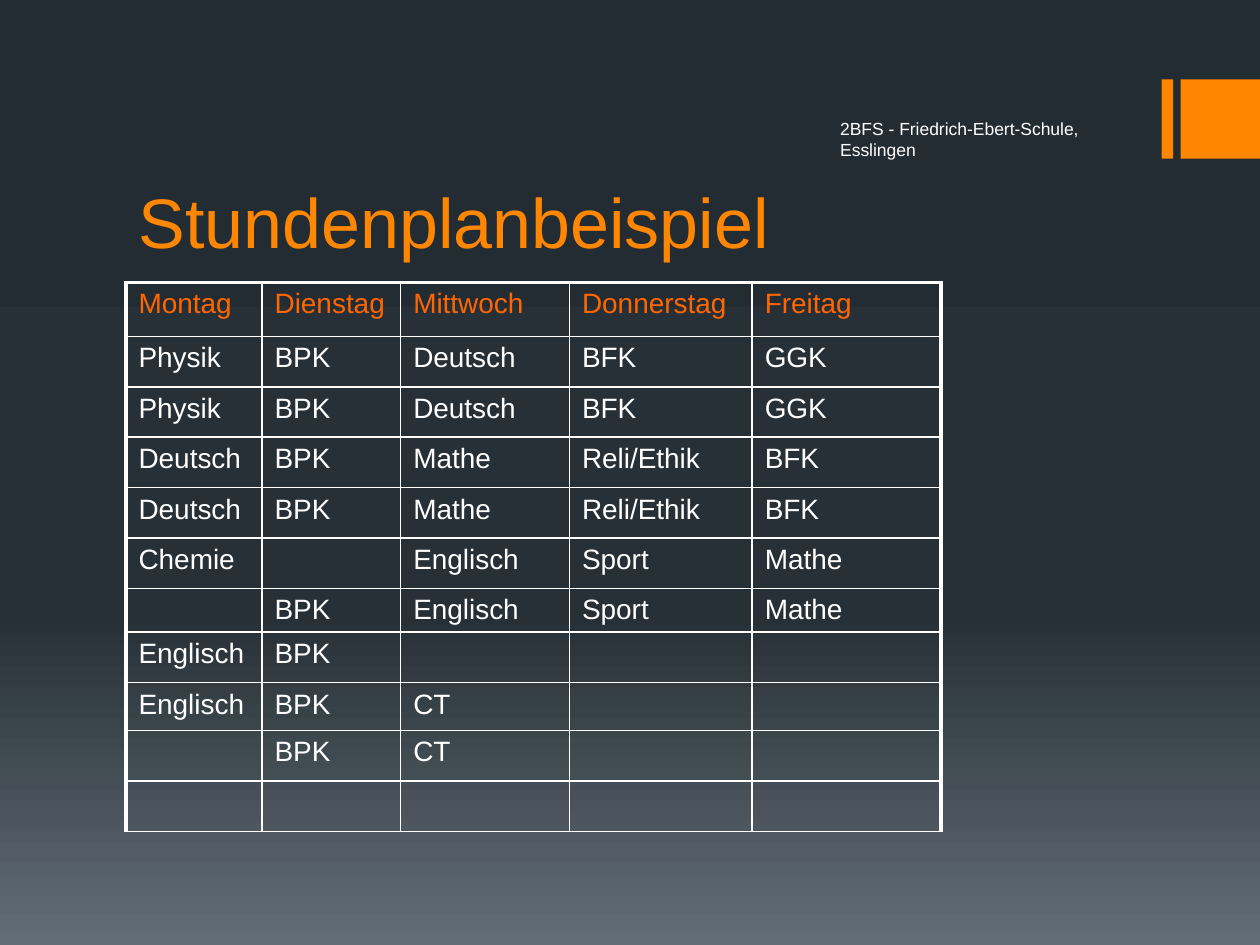
from copy import deepcopy
from dataclasses import dataclass

from lxml import etree
from pptx import Presentation, util as u
from pptx.dml.color import RGBColor
from pptx.enum import shapes, text
from pptx.oxml.ns import qn

COLORS = {
    "accent": "FF8600",
    "weekday": "FF6600",
    "white": "FFFFFF",
}
BACKDROP = [(0, "242C33"), (0.65, "273037"), (1, "636D76")]

TIMETABLE = [
    ("Montag", "Dienstag", "Mittwoch", "Donnerstag", "Freitag"),
    ("Physik", "BPK", "Deutsch", "BFK", "GGK"),
    ("Physik", "BPK", "Deutsch", "BFK", "GGK"),
    ("Deutsch", "BPK", "Mathe", "Reli/Ethik", "BFK"),
    ("Deutsch", "BPK", "Mathe", "Reli/Ethik", "BFK"),
    ("Chemie", "", "Englisch", "Sport", "Mathe"),
    ("", "BPK", "Englisch", "Sport", "Mathe"),
    ("Englisch", "BPK", "", "", ""),
    ("Englisch", "BPK", "CT", "", ""),
    ("", "BPK", "CT", "", ""),
    ("", "", "", "", ""),
]
DAY_WIDTHS = [1.08, 1.1, 1.34, 1.45, 1.5]
LESSON_HEIGHTS = [0.43] + [0.4] * 5 + [0.31, 0.4, 0.38, 0.4, 0.4]
OUTER_LINE, INNER_LINE = 2.25, 1


@dataclass
class AccentBar:
    left: float
    width: float


ACCENT_BARS = [AccentBar(9.22, 0.09), AccentBar(9.37, 0.63)]


def rgb(name: str) -> RGBColor:
    return RGBColor.from_string(COLORS[name])


def style(paragraph, size: float, color: str) -> None:
    paragraph.font.name = "Arial"
    paragraph.font.size = u.Pt(size)
    paragraph.font.color.rgb = rgb(color)


def paint_background(slide) -> None:
    fill = slide.background.fill
    fill.gradient()
    fill.gradient_angle = 270
    stop_list = slide.element.find(".//" + qn("a:gsLst"))
    stop_list.append(deepcopy(stop_list[-1]))
    for stop, (position, color) in zip(fill.gradient_stops, BACKDROP):
        stop.position = position
        stop.color.rgb = RGBColor.from_string(color)


def draw_bar(slide, bar: AccentBar) -> None:
    shape = slide.shapes.add_shape(
        shapes.MSO_SHAPE.RECTANGLE,
        u.Inches(bar.left), u.Inches(0.63), u.Inches(bar.width), u.Inches(0.63),
    )
    shape.shadow.inherit = False
    shape.fill.solid()
    shape.fill.fore_color.rgb = rgb("accent")
    shape.line.fill.background()


def write_title(slide) -> None:
    title = slide.shapes.title
    title.left, title.top = u.Inches(1), u.Inches(0.94)
    title.width, title.height = u.Inches(8), u.Inches(1.19)
    frame = title.text_frame
    frame.text = "Stundenplanbeispiel"
    frame.vertical_anchor = text.MSO_ANCHOR.BOTTOM
    frame.paragraphs[0].alignment = text.PP_ALIGN.LEFT
    style(frame.paragraphs[0], 40, "accent")


def set_borders(cell, widths: dict[str, float]) -> None:
    properties = cell._tc.get_or_add_tcPr()
    for side, width in widths.items():
        line = etree.SubElement(properties, qn(f"a:ln{side}"), w=str(u.Pt(width)))
        solid = etree.SubElement(line, qn("a:solidFill"))
        etree.SubElement(solid, qn("a:srgbClr"), val=COLORS["white"])


def draw_timetable(slide) -> None:
    table = slide.shapes.add_table(
        len(TIMETABLE), len(DAY_WIDTHS), u.Inches(1), u.Inches(2.24),
        u.Inches(sum(DAY_WIDTHS)), u.Inches(sum(LESSON_HEIGHTS)),
    ).table
    table.first_row = table.horz_banding = False
    for column, width in zip(table.columns, DAY_WIDTHS):
        column.width = u.Inches(width)
    for row, height in zip(table.rows, LESSON_HEIGHTS):
        row.height = u.Inches(height)

    last_day = len(DAY_WIDTHS) - 1
    for lesson, subjects in enumerate(TIMETABLE):
        for day, subject in enumerate(subjects):
            cell = table.cell(lesson, day)
            cell.text = subject
            style(cell.text_frame.paragraphs[0], 16, "white" if lesson else "weekday")
            set_borders(cell, {
                "L": INNER_LINE if day else OUTER_LINE,
                "R": OUTER_LINE if day == last_day else INNER_LINE,
                "T": INNER_LINE if lesson else OUTER_LINE,
                "B": INNER_LINE,
            })
            cell.fill.background()


def write_school(slide) -> None:
    frame = slide.shapes.add_textbox(
        u.Inches(6.57), u.Inches(0.94), u.Inches(2.46), u.Inches(0.33)
    ).text_frame
    frame.word_wrap = True
    frame.margin_top = 0
    frame.text = "2BFS - Friedrich-Ebert-Schule, Esslingen"
    style(frame.paragraphs[0], 10, "white")


def main() -> None:
    presentation = Presentation()
    presentation.slide_width, presentation.slide_height = u.Inches(10), u.Inches(7.5)
    slide = presentation.slides.add_slide(presentation.slide_layouts[5])
    paint_background(slide)
    for bar in ACCENT_BARS:
        draw_bar(slide, bar)
    write_title(slide)
    draw_timetable(slide)
    write_school(slide)
    presentation.save("out.pptx")


if __name__ == "__main__":
    main()
